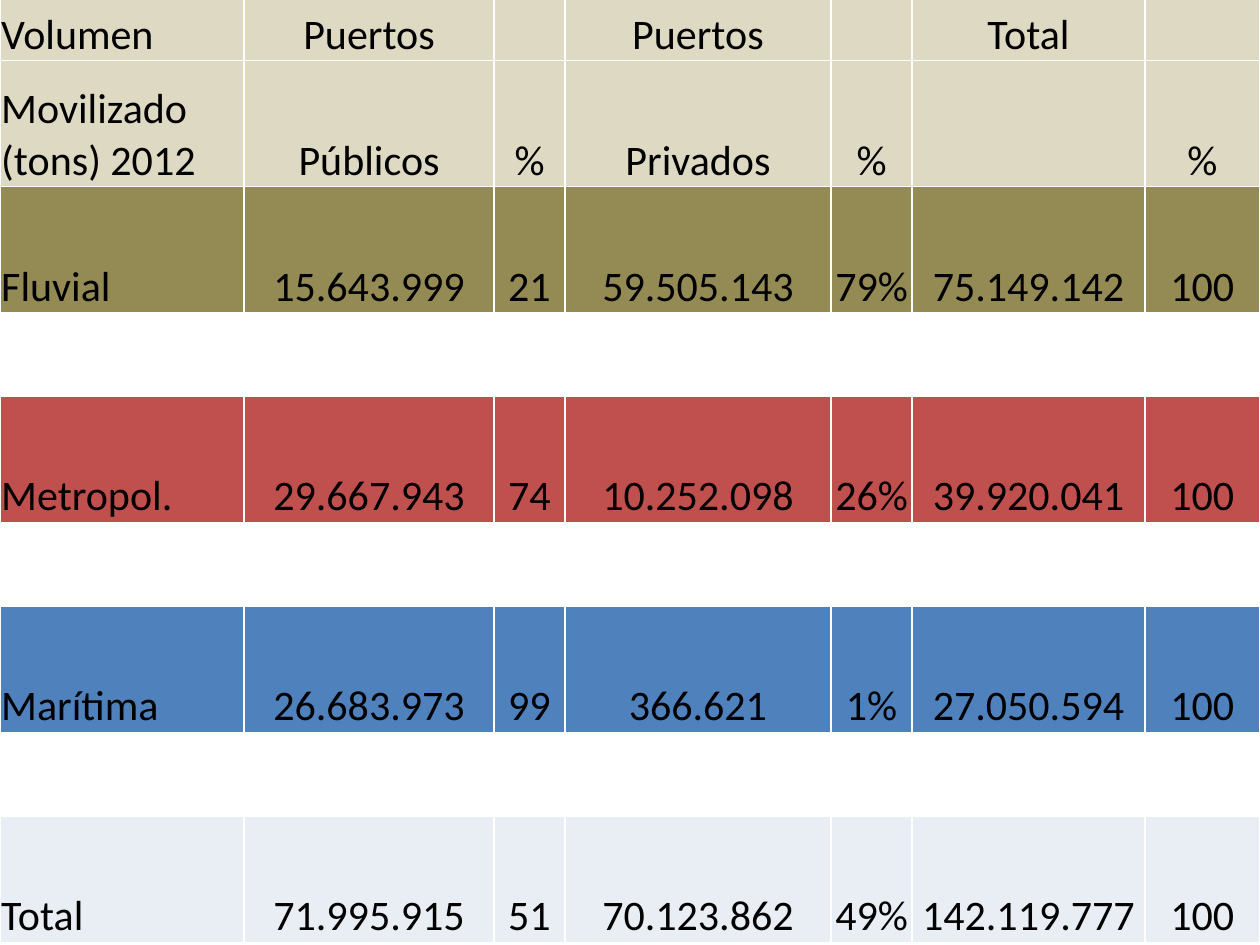
from dataclasses import dataclass

from lxml import etree
from pptx import Presentation
from pptx.dml.color import RGBColor
from pptx.enum.text import MSO_ANCHOR, PP_ALIGN
from pptx.oxml.ns import qn
from pptx.util import Pt

BOTTOM = MSO_ANCHOR.BOTTOM
LEFT, CENTER = PP_ALIGN.LEFT, PP_ALIGN.CENTER


@dataclass(frozen=True)
class Theme:
    """Colours, font and sizes of the slide."""
    font: str = "Calibri"
    size: float = 24
    ink: str = "000000"
    rule: str = "FFFFFF"
    line: float = 1
    inset: float = 0.72
    head: str = "DDD9C3"
    river: str = "948A54"
    metro: str = "C0504D"
    sea: str = "4F81BD"
    total: str = "E9EDF4"
    gap: str = "FFFFFF"


THEME = Theme()
WIDTHS = [139.5, 142.8, 40.6, 152, 46.4, 133, 65.7]
TALL, SHORT = 72, 48
BLANK = (SHORT, THEME.gap, [""] * len(WIDTHS))
ROWS = [
    (SHORT, THEME.head, ["Volumen", "Puertos", "", "Puertos", "", "Total", ""]),
    (TALL, THEME.head,
     ["Movilizado (tons) 2012", "Públicos", "%", "Privados", "%", "", "%"]),
    (TALL, THEME.river,
     ["Fluvial", "15.643.999", "21", "59.505.143", "79%", "75.149.142", "100"]),
    BLANK,
    (TALL, THEME.metro,
     ["Metropol.", "29.667.943", "74", "10.252.098", "26%", "39.920.041", "100"]),
    BLANK,
    (TALL, THEME.sea,
     ["Marítima", "26.683.973", "99", "366.621", "1%", "27.050.594", "100"]),
    BLANK,
    (TALL, THEME.total,
     ["Total", "71.995.915", "51", "70.123.862", "49%", "142.119.777", "100"]),
]


def add_rules(cell):
    """Draw the thin rule on all four sides of a cell."""
    props = cell._tc.get_or_add_tcPr()
    for spot, side in enumerate(("lnL", "lnR", "lnT", "lnB")):
        line = etree.Element(qn(f"a:{side}"), w=str(Pt(THEME.line)))
        fill = etree.SubElement(line, qn("a:solidFill"))
        etree.SubElement(fill, qn("a:srgbClr"), val=THEME.rule)
        props.insert(spot, line)


def fill_cell(cell, text, color, align):
    """Give a cell its text, fill, insets and rules."""
    cell.fill.solid()
    cell.fill.fore_color.rgb = RGBColor.from_string(color)
    cell.vertical_anchor = BOTTOM
    cell.margin_left = cell.margin_right = cell.margin_top = Pt(THEME.inset)
    cell.margin_bottom = 0
    cell.text = text
    para = cell.text_frame.paragraphs[0]
    para.alignment = align
    para.font.name = THEME.font
    para.font.size = Pt(THEME.size)
    para.font.bold = False
    para.font.color.rgb = RGBColor.from_string(THEME.ink)
    add_rules(cell)


def add_ports(slide, left, top, width, height):
    """Place the table of port volumes in the given box."""
    table = slide.shapes.add_table(
        len(ROWS), len(WIDTHS), Pt(left), Pt(top), Pt(width), Pt(height)).table
    table.first_row = table.horz_banding = False
    wide = width / sum(WIDTHS)
    high = height / sum(tall for tall, _, _ in ROWS)
    for col, size in zip(table.columns, WIDTHS):
        col.width = Pt(size * wide)
    for row, (tall, color, texts) in zip(table.rows, ROWS):
        row.height = Pt(tall * high)
        for spot, (cell, text) in enumerate(zip(row.cells, texts)):
            fill_cell(cell, text, color, CENTER if spot else LEFT)


def main():
    """Build the slide and save it."""
    deck = Presentation()
    deck.slide_width, deck.slide_height = Pt(720), Pt(540)
    slide = deck.slides.add_slide(deck.slide_layouts[6])
    add_ports(slide, 0, -13.5, 720, 552)
    deck.save("out.pptx")


if __name__ == "__main__":
    main()
